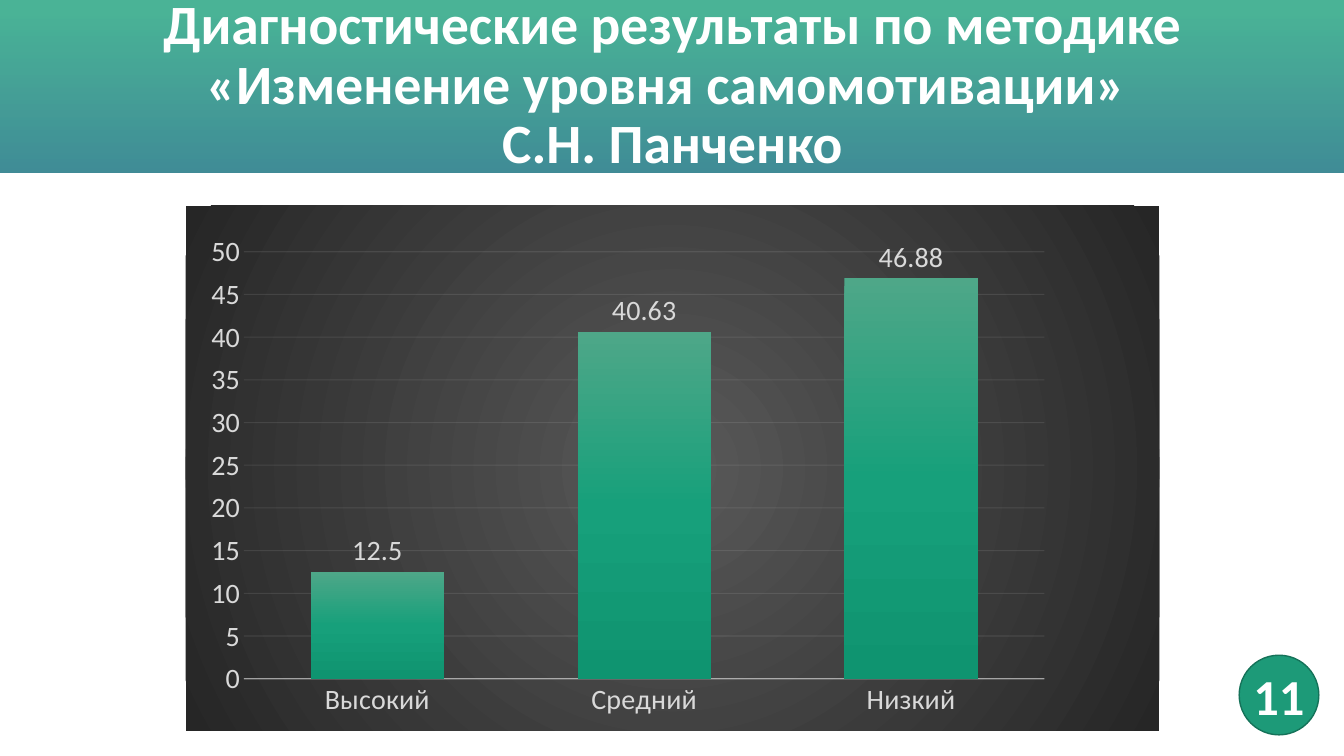
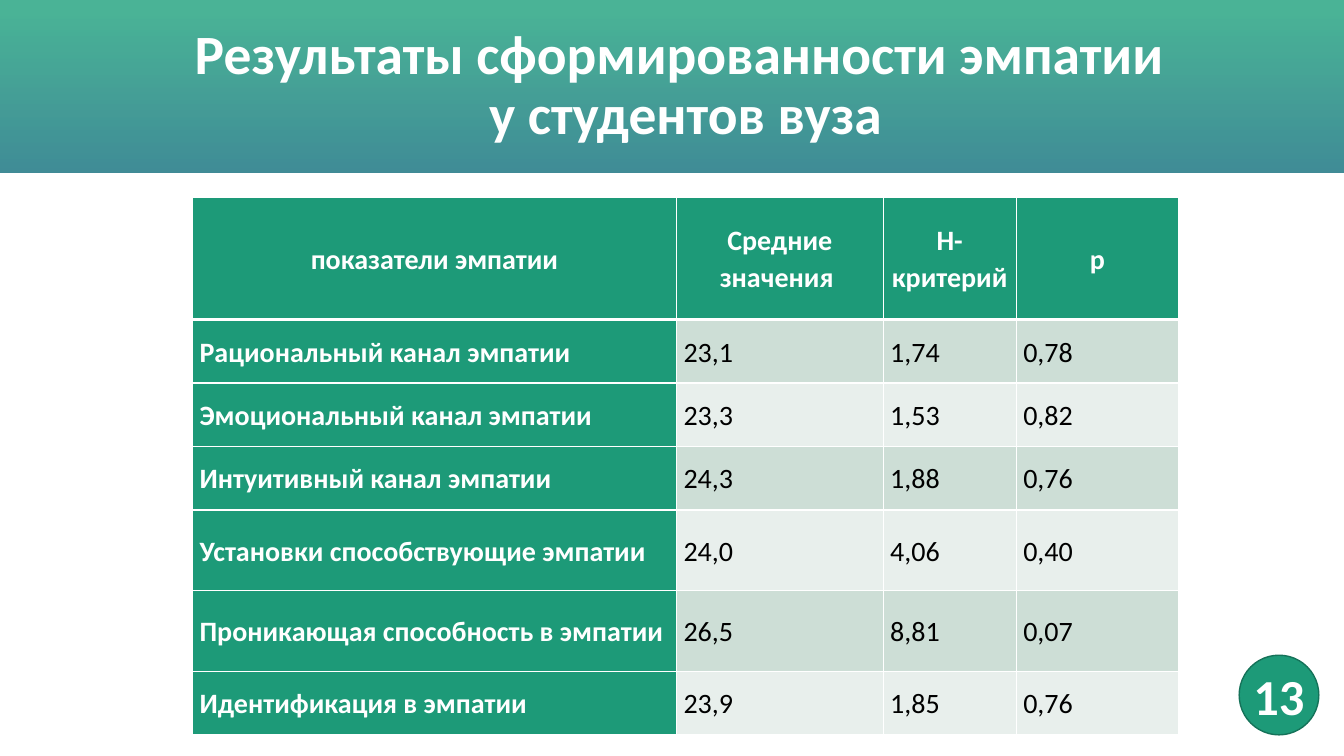
from pptx import Presentation
from pptx.chart.data import CategoryChartData
from pptx.dml.color import RGBColor
from pptx.enum.chart import XL_CHART_TYPE, XL_LABEL_POSITION, XL_TICK_MARK
from pptx.enum.shapes import MSO_SHAPE
from pptx.enum.text import MSO_ANCHOR, MSO_AUTO_SIZE, PP_ALIGN
from pptx.oxml import parse_xml
from pptx.oxml.ns import nsdecls, qn
from pptx.util import Inches, Pt

FONT = "Calibri"
WHITE, BLACK = "FFFFFF", "000000"
GREEN, DARK_GREEN = "1D9A78", "157259"
BAND_ROWS = ("CDDED6", "E8EFEC")
CHART_TEXT, CHART_LINE = "D9D9D9", "F2F2F2"
LINEAR = '<a:lin ang="{}" scaled="0"/>'
RADIAL = ('<a:path path="circle"><a:fillToRect l="50000" t="50000" '
          'r="50000" b="50000"/></a:path>')


def rgb(value):
    return RGBColor.from_string(value)


def style_font(font, size, color, bold=False):
    font.name, font.size, font.bold = FONT, Pt(size), bold
    font.color.rgb = rgb(color)


def gradient_fill(sp_pr, stops, direction, alpha=100):
    """Put a gradient in place of the empty fill of sp_pr."""
    gs = "".join(
        f'<a:gs pos="{pos * 1000}"><a:srgbClr val="{color}">'
        f'<a:alpha val="{alpha * 1000}"/></a:srgbClr></a:gs>'
        for pos, color in stops)
    no_fill = sp_pr.find(qn("a:noFill"))
    sp_pr.replace(no_fill, parse_xml(
        f'<a:gradFill {nsdecls("a")} rotWithShape="1"><a:gsLst>{gs}</a:gsLst>'
        f'{direction}</a:gradFill>'))


def set_line(line, parent, width, alpha):
    """Draw a translucent chart line; parent is the element that holds it."""
    line.width = Pt(width)
    line.color.rgb = rgb(CHART_LINE)
    for color in parent.iter(qn("a:srgbClr")):
        color.append(parse_xml(
            f'<a:alpha {nsdecls("a")} val="{alpha * 1000}"/>'))


# Parts shared by the slides
def add_band(s, x, y, w, h):
    band = s.shapes.add_shape(MSO_SHAPE.RECTANGLE, x, y, w, h)
    band.shadow.inherit = False
    band.line.fill.background()
    band.fill.background()
    gradient_fill(band._element.spPr, [(0, "12707E"), (93, "1FA27E")],
                  LINEAR.format(16200000), alpha=80)
    s.shapes._spTree.insert(2, band._element)  # behind the title


def add_title(s, lines, x, y, w, h):
    title = s.shapes.title
    title.left, title.top, title.width, title.height = x, y, w, h
    tf = title.text_frame
    tf.word_wrap, tf.auto_size = True, MSO_AUTO_SIZE.NONE
    tf.vertical_anchor = MSO_ANCHOR.MIDDLE
    p = tf.paragraphs[0]
    p.alignment, p.line_spacing = PP_ALIGN.CENTER, 0.9
    for i, line in enumerate(lines):
        if i:
            p.add_line_break()
        r = p.add_run()
        r.text = line
        style_font(r.font, 39.6, WHITE, True)


def add_number(s, number, x, y, size):
    sp = s.shapes.add_shape(MSO_SHAPE.OVAL, x, y, size, size)
    sp.shadow.inherit = False
    sp.fill.solid()
    sp.fill.fore_color.rgb = rgb(GREEN)
    sp.line.color.rgb = rgb(DARK_GREEN)
    sp.line.width = Pt(1)
    tf = sp.text_frame
    tf.margin_left = tf.margin_right = tf.margin_top = tf.margin_bottom = 0
    tf.word_wrap, tf.vertical_anchor = False, MSO_ANCHOR.MIDDLE
    p = tf.paragraphs[0]
    p.alignment = PP_ALIGN.CENTER
    r = p.add_run()
    r.text = str(number)
    style_font(r.font, 36, WHITE, True)


def add_base_slide(prs, title_lines, number, title_x, title_w):
    s = prs.slides.add_slide(prs.slide_layouts[5])
    add_band(s, 0, 0, prs.slide_width, Inches(1.71))
    add_title(s, title_lines, title_x, Inches(0.13), title_w, Inches(1.45))
    add_number(s, number, Inches(12.29), Inches(6.5), Inches(0.79))
    return s


# Column chart
def add_levels_chart(s, levels, x, y, w, h):
    data = CategoryChartData()
    data.categories = list(levels)
    data.add_series("Series 1", list(levels.values()))
    chart = s.shapes.add_chart(
        XL_CHART_TYPE.COLUMN_CLUSTERED, x, y, w, h, data).chart
    chart.has_legend = chart.has_title = False
    style_font(chart.font, 20, CHART_TEXT)

    # Background and plot area
    space = chart.element
    sp_pr = parse_xml(f'<c:spPr {nsdecls("c", "a")}><a:noFill/>'
                      '<a:ln><a:noFill/></a:ln></c:spPr>')
    gradient_fill(sp_pr, [(0, "595959"), (100, "262626")], RADIAL)
    chart_el = space.find(qn("c:chart"))
    chart_el.addnext(sp_pr)
    area = chart_el.find(qn("c:plotArea"))
    for old in area.findall(qn("c:layout")):
        area.remove(old)
    frame = "".join(f'<c:{k} val="{v}"/>' for k, v in (
        ("layoutTarget", "inner"), ("xMode", "edge"), ("yMode", "edge"),
        ("x", 0.06), ("y", 0.088), ("w", 0.822), ("h", 0.813)))
    area.insert(0, parse_xml(f'<c:layout {nsdecls("c")}><c:manualLayout>'
                             f'{frame}</c:manualLayout></c:layout>'))

    # Axes
    cat, val = chart.category_axis, chart.value_axis
    for axis in (cat, val):
        axis.major_tick_mark = axis.minor_tick_mark = XL_TICK_MARK.NONE
        style_font(axis.tick_labels.font, 20, CHART_TEXT)
    line = cat.format.line
    set_line(line, cat._element.find(qn("c:spPr")), 1, 54)
    val.minimum_scale, val.maximum_scale, val.major_unit = 0, 50, 5
    val.format.line.fill.background()
    grid = val.major_gridlines.format.line
    set_line(grid, val._element.find(qn("c:majorGridlines")), 0.75, 10)

    # Columns and their labels
    plot = chart.plots[0]
    plot.gap_width, plot.overlap, plot.vary_by_categories = 100, -24, False
    series = plot.series[0]
    series.format.fill.background()
    gradient_fill(series._element.find(qn("c:spPr")),
                  [(0, "4EA788"), (50, "17A07B"), (100, "0F9470")],
                  LINEAR.format(5400000))
    labels = series.data_labels
    labels.show_value, labels.position = True, XL_LABEL_POSITION.OUTSIDE_END
    style_font(labels.font, 20, CHART_TEXT)


# Table
def set_borders(cell, **widths):
    tc_pr = cell._tc.get_or_add_tcPr()
    for i, side in enumerate("LRTB"):
        tc_pr.insert(i, parse_xml(
            f'<a:ln{side} {nsdecls("a")} w="{Pt(widths.get(side, 1))}">'
            f'<a:solidFill><a:srgbClr val="{WHITE}"/></a:solidFill>'
            f'</a:ln{side}>'))


def fill_cell(cell, text, row, col):
    head = row == 0
    strong = head or col == 0
    cell.fill.solid()
    cell.fill.fore_color.rgb = rgb(GREEN if strong else BAND_ROWS[(row - 1) % 2])
    cell.margin_left = cell.margin_right = Inches(0.07)
    cell.margin_top = cell.margin_bottom = 0
    cell.vertical_anchor = MSO_ANCHOR.MIDDLE
    p = cell.text_frame.paragraphs[0]
    p.alignment = PP_ALIGN.CENTER if head else PP_ALIGN.JUSTIFY
    p.line_spacing = 1.07
    r = p.add_run()
    r.text = text
    style_font(r.font, 20, WHITE if strong else BLACK, strong)
    set_borders(cell, T=3 if row == 1 else 1, B=3 if head else 1)


def add_empathy_table(s, rows, widths, heights, x, y):
    table = s.shapes.add_table(
        len(rows), len(widths), x, y,
        Inches(sum(widths)), Inches(sum(heights))).table
    for column, width in zip(table.columns, widths):
        column.width = Inches(width)
    for i, (texts, height) in enumerate(zip(rows, heights)):
        table.rows[i].height = Inches(height)
        for j, text in enumerate(texts):
            fill_cell(table.cell(i, j), text, i, j)


# Slides
def chart_slide(prs):
    s = add_base_slide(
        prs, ["Диагностические результаты по методике "
              "«Изменение уровня самомотивации» ", "С.Н. Панченко"],
        11, Inches(0.92), Inches(11.5))
    levels = {"Высокий": 12.5, "Средний": 40.63, "Низкий": 46.88}
    add_levels_chart(s, levels, Inches(1.84), Inches(2.04),
                     Inches(9.66), Inches(5.21))


def table_slide(prs):
    s = add_base_slide(
        prs, ["Результаты сформированности эмпатии ", "у студентов вуза"],
        13, Inches(0.72), Inches(12.16))
    rows = [
        ("показатели эмпатии", "Средние значения ", "H-критерий", "р"),
        ("Рациональный канал эмпатии ", "23,1", "1,74", "0,78"),
        ("Эмоциональный канал эмпатии", "23,3", "1,53", "0,82"),
        ("Интуитивный канал эмпатии", "24,3", "1,88", "0,76"),
        ("Установки способствующие эмпатии", "24,0", "4,06", "0,40"),
        ("Проникающая способность в эмпатии", "26,5", "8,81", "0,07"),
        ("Идентификация в эмпатии", "23,9", "1,85", "0,76"),
    ]
    add_empathy_table(s, rows, (4.8, 2.05, 1.32, 1.61),
                      (1.21, 0.63, 0.63, 0.63, 0.8, 0.8, 0.63),
                      Inches(1.91), Inches(1.96))


def main():
    prs = Presentation()
    prs.slide_width, prs.slide_height = Inches(13.33), Inches(7.5)
    chart_slide(prs)
    table_slide(prs)
    prs.save("out.pptx")


if __name__ == "__main__":
    main()
